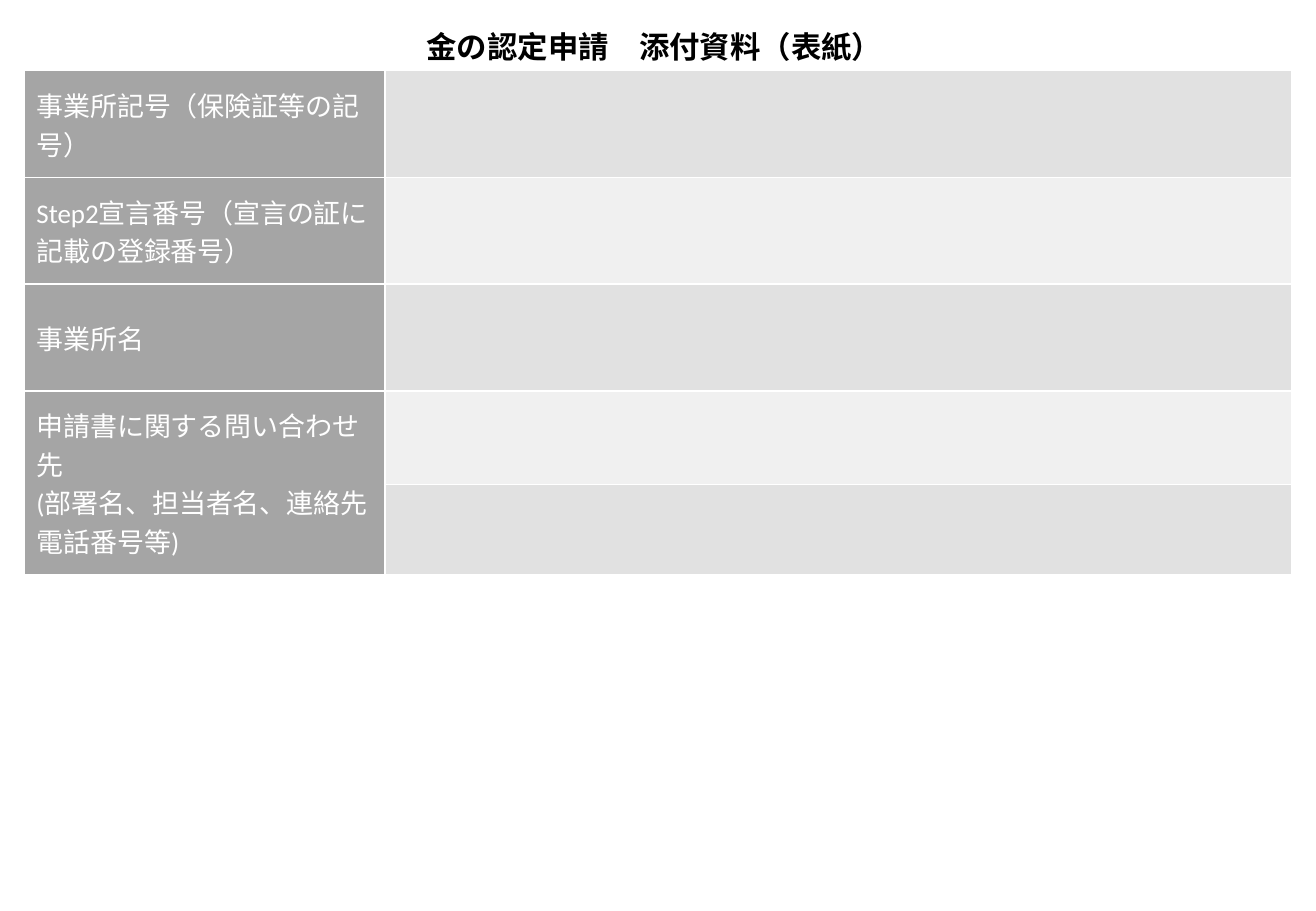
from lxml import etree
from pptx import Presentation
from pptx.dml.color import RGBColor
from pptx.enum.text import MSO_ANCHOR, MSO_AUTO_SIZE, PP_ALIGN
from pptx.oxml.ns import qn
from pptx.util import Inches, Pt

MIDDLE = MSO_ANCHOR.MIDDLE
TOP = MSO_ANCHOR.TOP
LEFT = PP_ALIGN.LEFT
NO_AUTOFIT = MSO_AUTO_SIZE.NONE
TITLE_ONLY = 5

BLACK, WHITE = "000000", "FFFFFF"
LABEL_FILL = "A5A5A5"
BAND_FILLS = ("E1E1E1", "F0F0F0")

TITLE = "金の認定申請　添付資料（表紙）"
LABELS = (
    "事業所記号（保険証等の記号）",
    "Step2宣言番号（宣言の証に記載の登録番号）",
    "事業所名",
    "申請書に関する問い合わせ先\n(部署名、担当者名、連絡先電話番号等)",
)
COLUMN_WIDTHS = (2.97, 7.46)
ROW_HEIGHTS = (0.88, 0.88, 0.88, 0.77, 0.74)


def color(value):
    return RGBColor.from_string(value)


def format_text(text_frame, font_name, size, text_color, bold=False):
    for paragraph in text_frame.paragraphs:
        paragraph.alignment = LEFT
        font = paragraph.font
        font.name = font_name
        font.size = Pt(size)
        font.bold = bold
        font.color.rgb = color(text_color)


def set_title(slide):
    title = slide.shapes.title
    title.left, title.top = Inches(3.41), Inches(0.18)
    title.width, title.height = Inches(4.01), Inches(0.4)
    text_frame = title.text_frame
    text_frame.text = TITLE
    text_frame.word_wrap = False
    text_frame.auto_size = NO_AUTOFIT
    text_frame.vertical_anchor = TOP
    format_text(text_frame, "Noto Sans CJK JP", 18, BLACK, bold=True)


def style_cell(cell, fill):
    # Borders come before the fill in the cell properties
    properties = cell._tc.get_or_add_tcPr()
    for side in ("a:lnL", "a:lnR", "a:lnT", "a:lnB"):
        line = etree.SubElement(properties, qn(side), w=str(Pt(1)))
        solid = etree.SubElement(line, qn("a:solidFill"))
        etree.SubElement(solid, qn("a:srgbClr"), val=WHITE)
    cell.fill.solid()
    cell.fill.fore_color.rgb = color(fill)
    cell.vertical_anchor = MIDDLE


def add_form_table(slide):
    frame = slide.shapes.add_table(
        len(ROW_HEIGHTS), len(COLUMN_WIDTHS), Inches(0.2), Inches(0.58),
        Inches(sum(COLUMN_WIDTHS)), Inches(sum(ROW_HEIGHTS)))
    table = frame.table
    table.first_row = False
    table.horz_banding = False
    for column, width in zip(table.columns, COLUMN_WIDTHS):
        column.width = Inches(width)
    for index, height in enumerate(ROW_HEIGHTS):
        table.rows[index].height = Inches(height)
        style_cell(table.cell(index, 0), LABEL_FILL)
        style_cell(table.cell(index, 1), BAND_FILLS[index % 2])

    # The contact label spans the last two rows
    table.cell(3, 0).merge(table.cell(4, 0))
    for index, label in enumerate(LABELS):
        text_frame = table.cell(index, 0).text_frame
        text_frame.text = label
        format_text(text_frame, "Calibri", 16, WHITE)


def main():
    presentation = Presentation()
    presentation.slide_width = Inches(10.83)
    presentation.slide_height = Inches(7.5)
    slide = presentation.slides.add_slide(presentation.slide_layouts[TITLE_ONLY])
    set_title(slide)
    add_form_table(slide)
    presentation.save("out.pptx")


if __name__ == "__main__":
    main()
